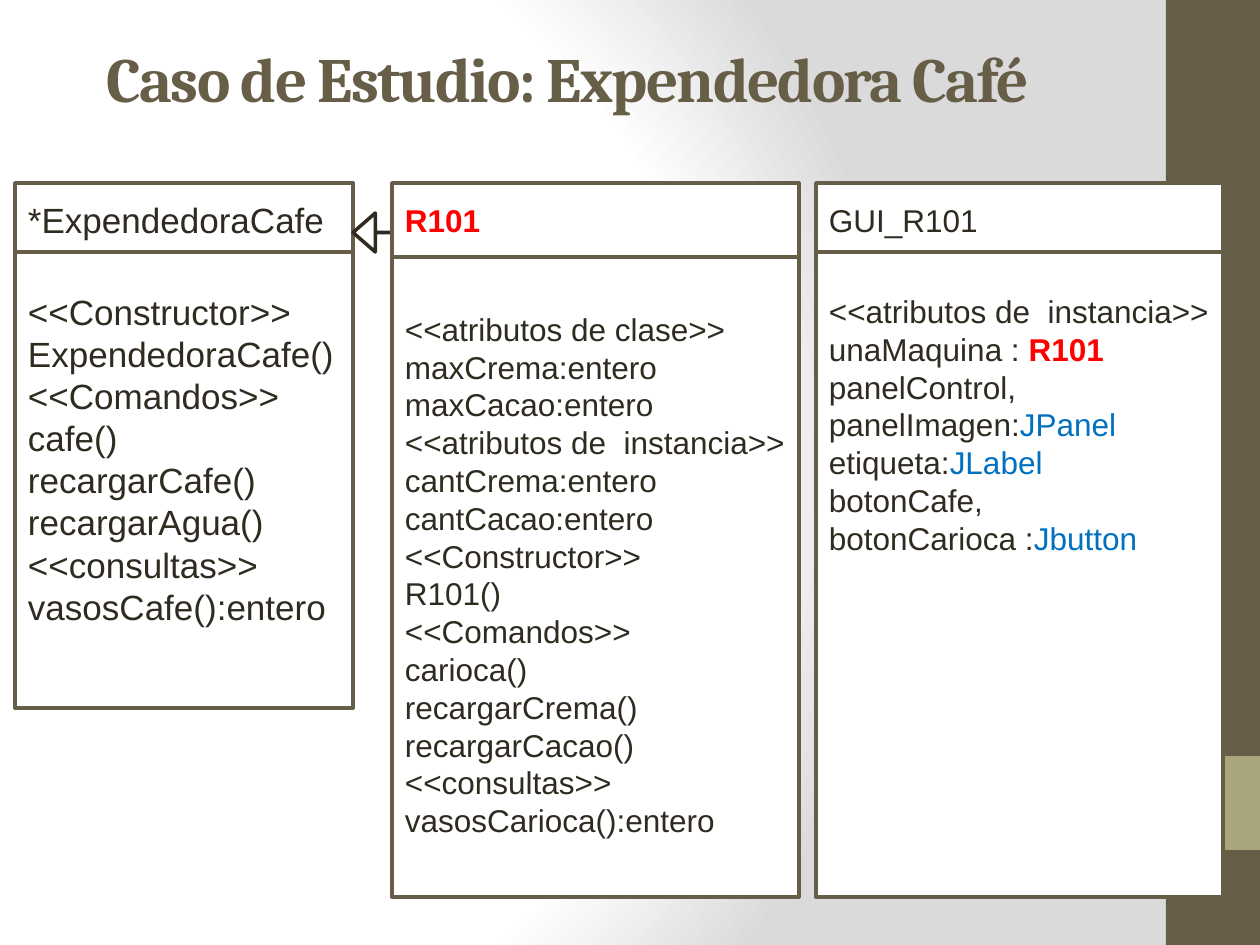
from lxml import etree
from pptx import Presentation
from pptx.dml.color import RGBColor
from pptx.enum.shapes import MSO_SHAPE
from pptx.enum.text import MSO_ANCHOR, PP_ALIGN
from pptx.oxml import parse_xml
from pptx.oxml.ns import qn
from pptx.util import Emu, Pt

RECTANGLE = MSO_SHAPE.RECTANGLE
RIGHT_ARROW = MSO_SHAPE.RIGHT_ARROW
MIDDLE = MSO_ANCHOR.MIDDLE
TOP = MSO_ANCHOR.TOP
LEFT = PP_ALIGN.LEFT

SCALE = 914400 // 126
SLIDE_SIZE = (1260, 945)
HEADER_TOP, HEADER_HEIGHT, BODY_TOP = 183, 74, 252
INSET = 13
COLORS = {
    "olive": "675E47",
    "sage": "A9A57C",
    "white": "FFFFFF",
    "gray": "DADADA",
    "text": "2F2B20",
    "red": "FF0000",
    "blue": "0070C0",
}
DRAWING_NAMESPACE = "http://schemas.openxmlformats.org/drawingml/2006/main"

BASE_METHODS = [
    "<<Constructor>>", "ExpendedoraCafe()", "<<Comandos>>", "cafe()",
    "recargarCafe()", "recargarAgua()", "<<consultas>>", "vasosCafe():entero",
]
MACHINE_MEMBERS = [
    "<<atributos de clase>>", "maxCrema:entero", "maxCacao:entero",
    "<<atributos de  instancia>>", "cantCrema:entero", "cantCacao:entero",
    "<<Constructor>>", "R101()", "<<Comandos>>", "carioca()",
    "recargarCrema()", "recargarCacao()", "<<consultas>>",
    "vasosCarioca():entero",
]
MACHINE_NAME = ("R101", "red", True)
WINDOW_MEMBERS = [
    "<<atributos de  instancia>>",
    ["unaMaquina : ", MACHINE_NAME],
    "panelControl,",
    ["panelImagen:", ("JPanel", "blue", False)],
    ["etiqueta:", ("JLabel", "blue", False)],
    "botonCafe,",
    ["botonCarioca :", ("Jbutton", "blue", False)],
]


def px(value):
    return Emu(value * SCALE)


def rgb(name):
    return RGBColor.from_string(COLORS[name])


def set_attributes(target, values):
    for name, value in values.items():
        setattr(target, name, value)


def format_font(font, name, size, color, bold=False):
    set_attributes(font, {"name": name, "size": Pt(size), "bold": bold})
    font.color.rgb = rgb(color)


def set_background(slide):
    slide.background.fill.gradient()
    stops = [(0, "white"), (75000, "white"), (100000, "gray")]
    stop_xml = "".join(
        f'<a:gs pos="{position}"><a:srgbClr val="{COLORS[color]}"/></a:gs>'
        for position, color in stops
    )
    gradient = parse_xml(
        f'<a:gradFill xmlns:a="{DRAWING_NAMESPACE}" rotWithShape="1">'
        f'<a:gsLst>{stop_xml}</a:gsLst><a:path path="circle">'
        '<a:fillToRect l="20000" t="50000" r="100000" b="50000"/>'
        '</a:path></a:gradFill>'
    )
    properties = slide.element.find(".//" + qn("p:bgPr"))
    properties.replace(properties.find(qn("a:gradFill")), gradient)
    if properties.find(qn("a:effectLst")) is None:
        etree.SubElement(properties, qn("a:effectLst"))


def add_title(slide, text):
    title = slide.shapes.title
    set_attributes(title, {
        "left": px(94), "top": px(0), "width": px(1072), "height": px(155),
    })
    frame = title.text_frame
    set_attributes(frame, {"vertical_anchor": MIDDLE, "word_wrap": True})
    paragraph = frame.paragraphs[0]
    paragraph.alignment = LEFT
    run = paragraph.add_run()
    run.text = text
    format_font(run.font, "Cambria", 36, "olive", True)
    run.font._element.set("spc", "-100")


def add_block(slide, preset, bounds, fill, line=None):
    shape = slide.shapes.add_shape(preset, *map(px, bounds))
    shape.shadow.inherit = False
    shape.fill.solid()
    shape.fill.fore_color.rgb = rgb(fill)
    if line:
        shape.line.color.rgb = rgb(line)
        shape.line.width = Pt(2)
    else:
        shape.line.fill.background()
    return shape


def add_text_box(slide, bounds, lines, size, anchor=MIDDLE, top=6, bottom=6):
    shape = add_block(slide, RECTANGLE, bounds, "white", "olive")
    frame = shape.text_frame
    set_attributes(frame, {
        "word_wrap": True, "vertical_anchor": anchor,
        "margin_left": px(INSET), "margin_right": px(INSET),
        "margin_top": px(top), "margin_bottom": px(bottom),
    })
    for index, line in enumerate(lines):
        paragraph = frame.add_paragraph() if index else frame.paragraphs[0]
        paragraph.alignment = LEFT
        for part in [line] if isinstance(line, str) else line:
            text, color, bold = (part, "text", False) if isinstance(part, str) else part
            run = paragraph.add_run()
            run.text = text
            format_font(run.font, "Arial", size, color, bold)


def add_header(slide, left, width, line, size):
    add_text_box(slide, (left, HEADER_TOP, width, HEADER_HEIGHT), [line], size)


def add_body(slide, left, width, height, lines, size, **layout):
    add_text_box(slide, (left, BODY_TOP, width, height), lines, size, **layout)


def add_inheritance_arrow(slide):
    arrow = add_block(slide, RIGHT_ARROW, (353, 213, 122, 39), "white", "text")
    arrow.rotation = 180
    arrow.adjustments[0] = 0
    arrow.adjustments[1] = 0.57


def main():
    presentation = Presentation()
    presentation.slide_width, presentation.slide_height = map(px, SLIDE_SIZE)
    slide = presentation.slides.add_slide(presentation.slide_layouts[5])
    set_background(slide)
    add_block(slide, RECTANGLE, (1166, 0, 94, 945), "olive")
    add_block(slide, RECTANGLE, (1166, 756, 94, 94), "sage")
    add_title(slide, "Caso de Estudio: Expendedora Café")

    add_body(slide, 392, 407, 645, MACHINE_MEMBERS, 18)
    add_header(slide, 816, 407, "GUI_R101", 18)
    add_body(slide, 816, 407, 645, WINDOW_MEMBERS, 18, anchor=TOP, top=40)
    add_header(slide, 15, 338, "*ExpendedoraCafe", 20)
    add_body(slide, 15, 338, 456, BASE_METHODS, 20, bottom=48)
    add_inheritance_arrow(slide)
    add_header(slide, 392, 407, [MACHINE_NAME], 18)
    presentation.save("out.pptx")


if __name__ == "__main__":
    main()
